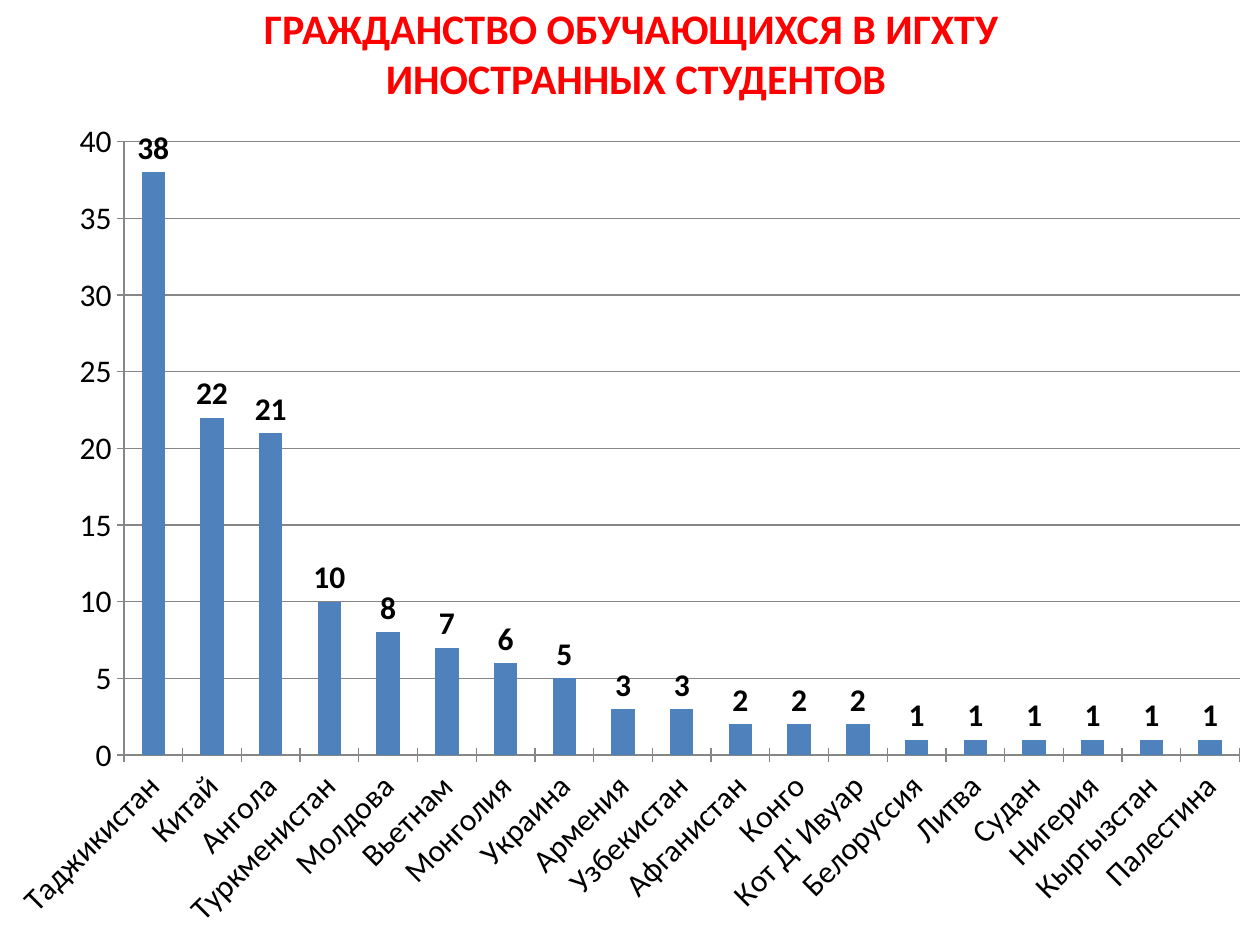
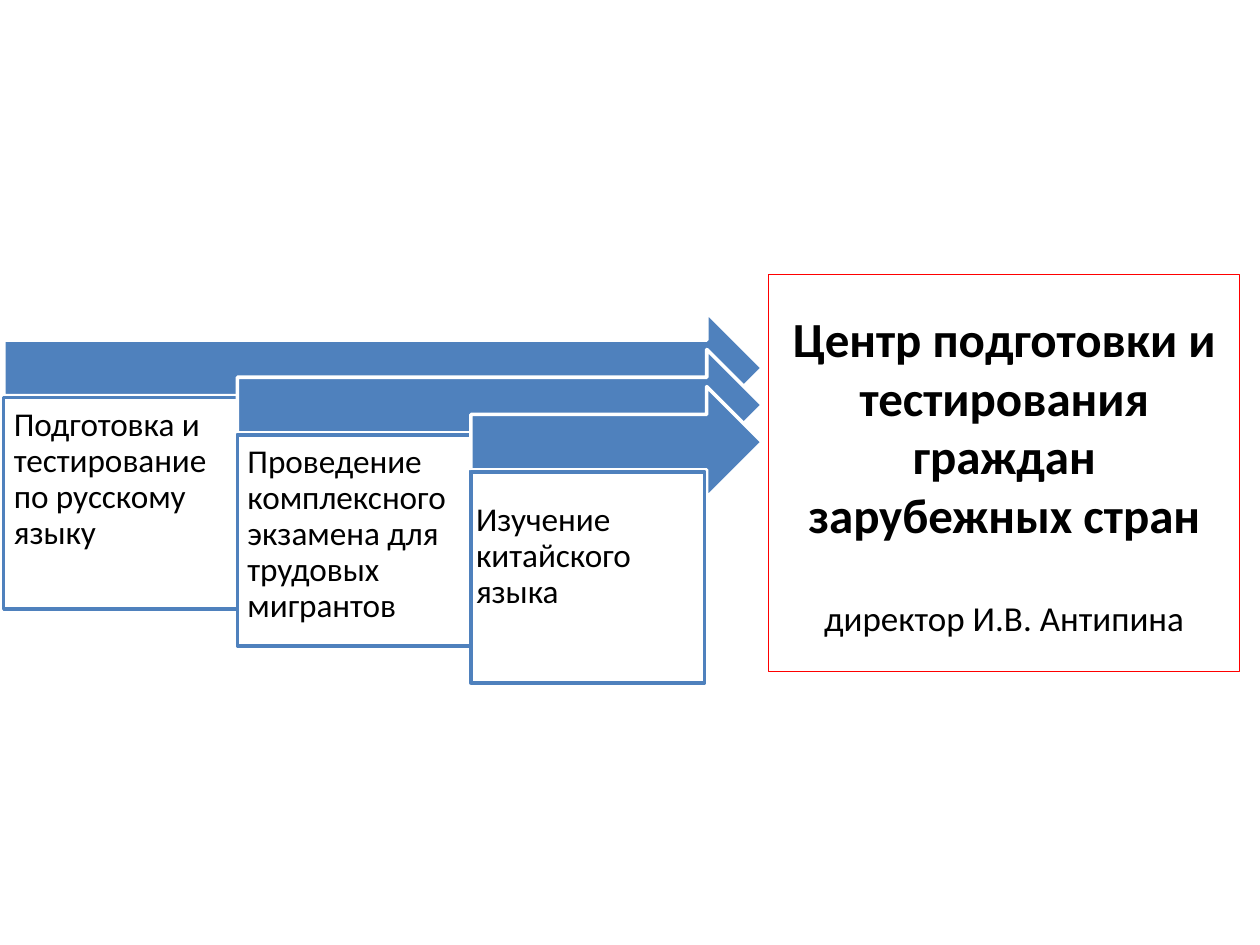
from dataclasses import dataclass

from pptx import Presentation
from pptx import util as u
from pptx.chart.data import CategoryChartData
from pptx.dml.color import RGBColor
from pptx.enum import chart as ch, shapes, text


@dataclass(frozen=True)
class Theme:
    font: str = "Calibri"
    red: RGBColor = RGBColor(255, 0, 0)
    blue: RGBColor = RGBColor(0x4F, 0x81, 0xBD)
    grey: RGBColor = RGBColor(0x86, 0x86, 0x86)
    white: RGBColor = RGBColor(255, 255, 255)
    black: RGBColor = RGBColor(0, 0, 0)
    head: int = 24
    lead: int = 28
    sub: int = 20
    axis: int = 18
    card: int = 19
    edge: int = 2
    hair: float = 0.75


T = Theme()
COLS, ROWS = 100, 75
WIDE, HIGH = u.Inches(10), u.Inches(7.5)

COUNTS = {
    "Таджикистан": 38, "Китай": 22, "Ангола": 21, "Туркменистан": 10,
    "Молдова": 8, "Вьетнам": 7, "Монголия": 6, "Украина": 5,
    "Армения": 3, "Узбекистан": 3, "Афганистан": 2, "Конго": 2,
    "Кот Д' Ивуар": 2, "Белоруссия": 1, "Литва": 1, "Судан": 1,
    "Нигерия": 1, "Кыргызстан": 1, "Палестина": 1,
}
# Each task with the inset of its text: side, top (inches)
TASKS = [
    ("Подготовка и тестирование по русскому языку", 0.08, 0.08),
    ("Проведение комплексного экзамена для трудовых мигрантов", 0.08, 0.08),
    ("Изучение китайского языка", 0.04, 0.25),
]


def grid(x, y, w, h):
    """Turn columns and rows into slide lengths."""
    return [int(n * size / cells) for n, size, cells in
            ((x, WIDE, COLS), (y, HIGH, ROWS), (w, WIDE, COLS), (h, HIGH, ROWS))]


def style(font, size, color=T.black, bold=False):
    font.name, font.size, font.bold = T.font, u.Pt(size), bold
    font.color.rgb = color


def paint(shape, fill, line):
    shape.shadow.inherit = False
    shape.fill.solid()
    shape.fill.fore_color.rgb = fill
    shape.line.color.rgb = line
    shape.line.width = u.Pt(T.edge)


def title(slide, box, *parts):
    """Place the title; each part is (words, size, colour, bold, space before)."""
    head = slide.shapes.title
    head.left, head.top, head.width, head.height = grid(*box)
    frame = head.text_frame
    frame.word_wrap = True
    frame.auto_size = text.MSO_AUTO_SIZE.NONE
    frame.vertical_anchor = text.MSO_ANCHOR.MIDDLE
    for i, (words, size, color, bold, gap) in enumerate(parts):
        par = frame.add_paragraph() if i else frame.paragraphs[0]
        par.text = words
        par.alignment = text.PP_ALIGN.CENTER
        par.space_before = u.Pt(gap)
        style(par.font, size, color, bold)
    return head


def bars(slide, box):
    """Column chart of students by country."""
    data = CategoryChartData()
    data.categories = list(COUNTS)
    data.add_series("Series 1", list(COUNTS.values()))
    chart = slide.shapes.add_chart(
        ch.XL_CHART_TYPE.COLUMN_CLUSTERED, *grid(*box), data).chart
    chart.has_title = chart.has_legend = False
    style(chart.font, T.axis)

    # Axes
    for axis in (chart.category_axis, chart.value_axis):
        axis.major_tick_mark = ch.XL_TICK_MARK.CROSS
        axis.format.line.color.rgb = T.grey
        style(axis.tick_labels.font, T.axis)
    turn = chart.category_axis._element.get_or_add_txPr().bodyPr
    turn.set("rot", "-2700000")
    turn.set("vert", "horz")
    scale = chart.value_axis
    scale.minimum_scale, scale.maximum_scale, scale.major_unit = 0, 40, 5
    scale.has_major_gridlines = True
    scale.major_gridlines.format.line.color.rgb = T.grey

    # Columns and their values
    plot = chart.plots[0]
    plot.vary_by_categories = False
    plot.gap_width = 150
    fill = plot.series[0].format.fill
    fill.solid()
    fill.fore_color.rgb = T.blue
    plot.has_data_labels = True
    tags = plot.data_labels
    tags.show_value = True
    tags.position = ch.XL_LABEL_POSITION.OUTSIDE_END
    style(tags.font, T.axis, bold=True)


def card(slide, box, words, side, top):
    rect = slide.shapes.add_shape(shapes.MSO_SHAPE.RECTANGLE, *grid(*box))
    paint(rect, T.white, T.blue)
    frame = rect.text_frame
    frame.word_wrap = True
    frame.vertical_anchor = text.MSO_ANCHOR.TOP
    frame.margin_left = frame.margin_right = frame.margin_bottom = u.Inches(side)
    frame.margin_top = u.Inches(top)
    par = frame.paragraphs[0]
    par.text = words
    par.alignment = text.PP_ALIGN.LEFT
    par.line_spacing = 0.9
    style(par.font, T.card)


def flow(slide, box):
    """Stepped arrows that share one right edge, each with a card below."""
    x, y, w, h = box
    step, rise = 0.308 * w, 0.1 * h
    for i, task in enumerate(TASKS):
        left, top = i * step, y + i * rise
        arrow = slide.shapes.add_shape(
            shapes.MSO_SHAPE.RIGHT_ARROW,
            *grid(x + left, top, w - left, 0.3 * h))
        paint(arrow, T.blue, T.white)
        card(slide, (x + left, top + 0.23 * h, step, 0.57 * h), *task)


def main():
    deck = Presentation()
    deck.slide_width, deck.slide_height = WIDE, HIGH
    plain = deck.slide_layouts[5]

    # Students by country
    slide = deck.slides.add_slide(plain)
    title(slide, (5.1, 0.1, 90, 8.2),
          ("ГРАЖДАНСТВО ОБУЧАЮЩИХСЯ В ИГХТУ\v ИНОСТРАННЫХ СТУДЕНТОВ",
           T.head, T.red, True, 0))
    bars(slide, (-0.8, 8.4, 101.2, 66.6))

    # Testing centre
    slide = deck.slides.add_slide(plain)
    head = title(slide, (61, 21.8, 37.4, 31.5),
                 ("Центр подготовки и тестирования граждан зарубежных стран",
                  T.lead, T.black, True, 0),
                 ("директор И.В. Антипина", T.sub, T.black, False, 30))
    head.line.color.rgb = T.red
    head.line.width = u.Pt(T.hair)
    flow(slide, (0.3, 24.8, 60.2, 29.4))

    deck.save("out.pptx")


if __name__ == "__main__":
    main()
